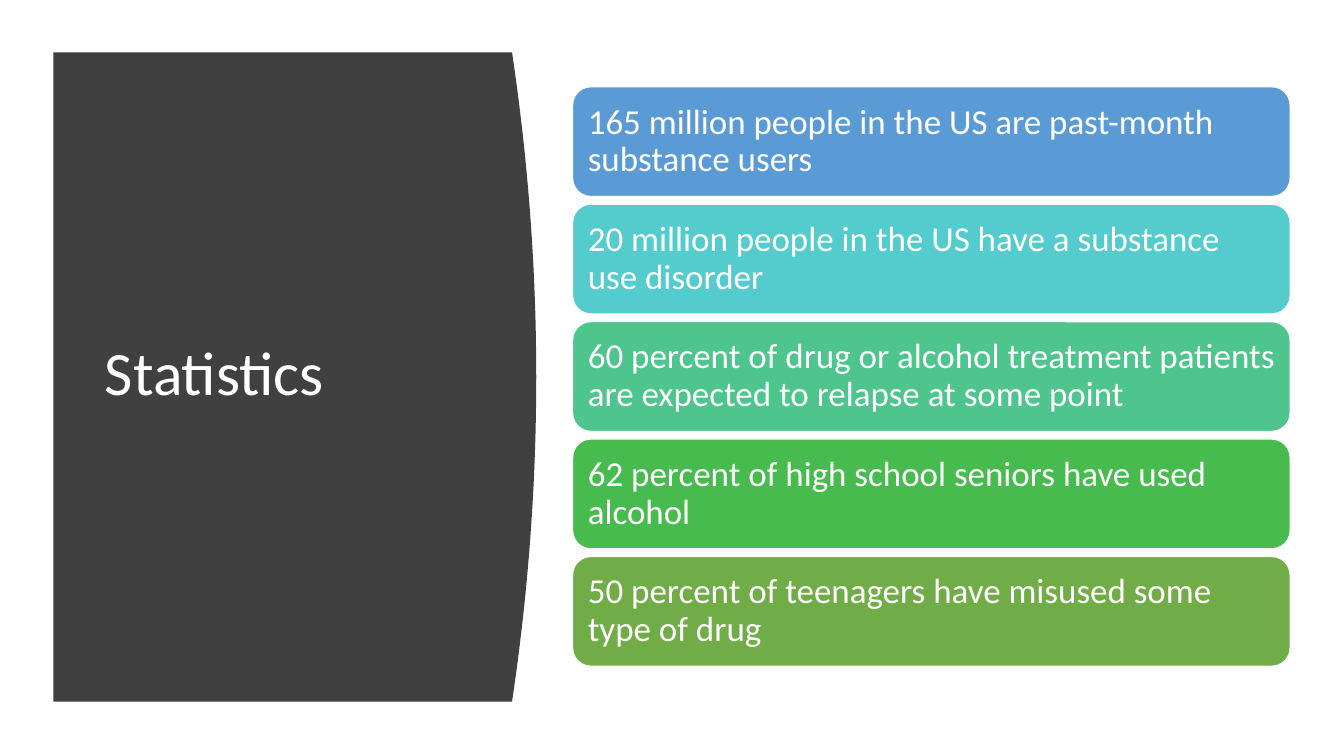
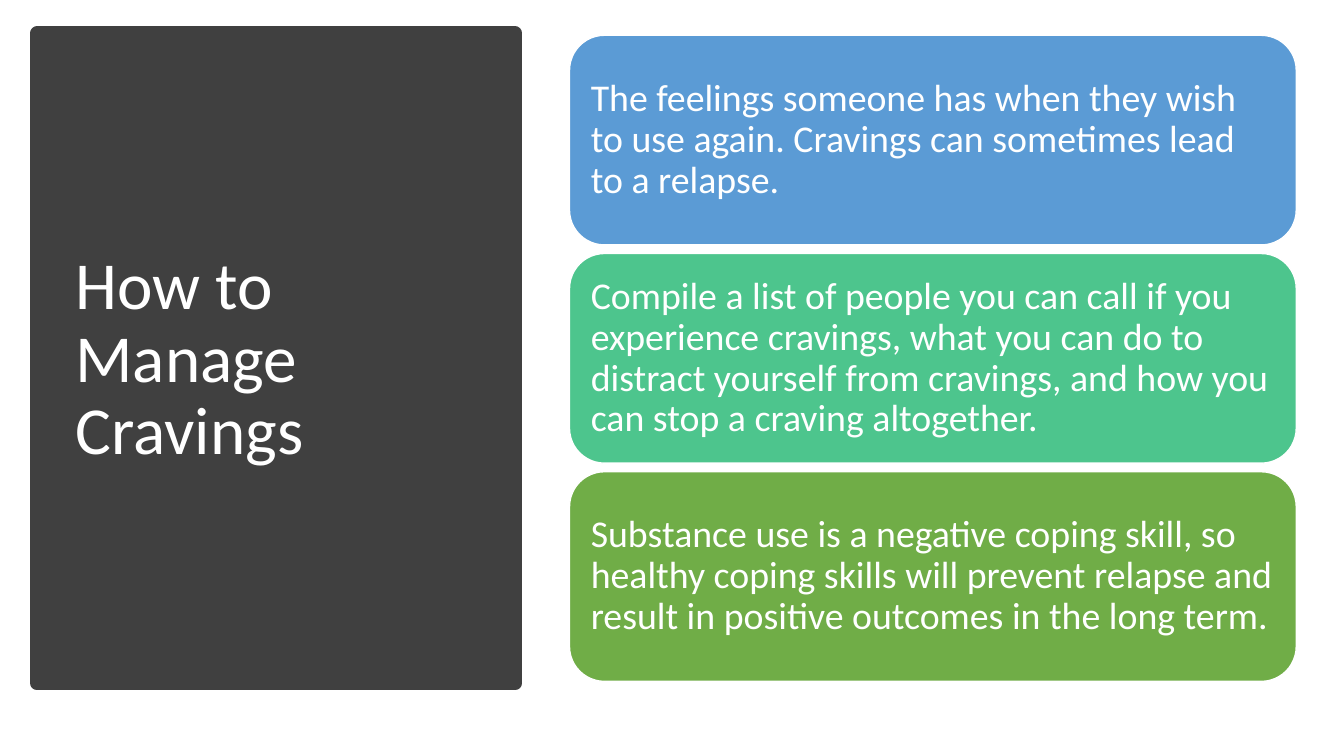
from pptx import Presentation
from pptx.dml.color import RGBColor
from pptx.enum.shapes import MSO_SHAPE
from pptx.enum.text import MSO_ANCHOR, MSO_AUTO_SIZE, PP_ALIGN
from pptx.util import Emu, Pt

PX = 9144  # EMU; 100 px to the inch
FONT = "Calibri"
WHITE = RGBColor(0xFF, 0xFF, 0xFF)
CHARCOAL = RGBColor(0x40, 0x40, 0x40)
BLUE = RGBColor(0x5B, 0x9B, 0xD5)
TURQUOISE = RGBColor(0x54, 0xCC, 0xCD)
MINT = RGBColor(0x4D, 0xC5, 0x8D)
GREEN = RGBColor(0x48, 0xBB, 0x4F)
OLIVE = RGBColor(0x70, 0xAD, 0x47)

STATISTICS = [
    ("165 million people in the US are past-month substance users", BLUE),
    ("20 million people in the US have a substance use disorder", TURQUOISE),
    ("60 percent of drug or alcohol treatment patients are expected "
     "to relapse at some point", MINT),
    ("62 percent of high school seniors have used alcohol", GREEN),
    ("50 percent of teenagers have misused some type of drug", OLIVE),
]
CRAVINGS = [
    ("The feelings someone has when they wish to use again. "
     "Cravings can sometimes lead to a relapse.", BLUE),
    ("Compile a list of people you can call if you experience cravings, "
     "what you can do to distract yourself from cravings, and how you can "
     "stop a craving altogether.", MINT),
    ("Substance use is a negative coping skill, so healthy coping skills "
     "will prevent relapse and result in positive outcomes in the long term.",
     OLIVE),
]


def px(*lengths):
    return [Emu(round(n * PX)) for n in lengths]


def paint(sp, fill, line, width):
    sp.shadow.inherit = False
    sp.fill.solid()
    sp.fill.fore_color.rgb = fill
    sp.line.color.rgb = line
    sp.line.width = Pt(width)


def style_text(tf, size):
    tf.word_wrap = True
    tf.auto_size = MSO_AUTO_SIZE.NONE
    tf.vertical_anchor = MSO_ANCHOR.MIDDLE
    p = tf.paragraphs[0]
    p.alignment = PP_ALIGN.LEFT
    p.line_spacing = 0.9
    p.font.name = FONT
    p.font.size = Pt(size)
    p.font.color.rgb = WHITE


def send_to_back(slide, sp):
    slide.shapes._spTree.insert(2, sp._element)


def add_title(slide, text, box, size):
    title = slide.shapes.title
    title.left, title.top, title.width, title.height = px(*box)
    title.text_frame.text = text
    style_text(title.text_frame, size)


def add_curved_panel(slide, box, bulge, steps=48):
    """Panel whose right edge bows out by bulge, as a parabola."""
    x, y, w, h = box
    edge = []
    for i in range(steps + 1):
        t = i / steps
        edge.append(px(x + w - bulge * (2 * t - 1) ** 2, y + h * t))
    builder = slide.shapes.build_freeform(*px(x, y), scale=1.0)
    builder.add_line_segments(edge + [px(x, y + h)], close=True)
    panel = builder.convert_to_shape()
    paint(panel, CHARCOAL, CHARCOAL, 0)
    panel.line.fill.background()
    send_to_back(slide, panel)


def add_square_panel(slide, box):
    panel = slide.shapes.add_shape(MSO_SHAPE.RECTANGLE, *px(*box))
    paint(panel, CHARCOAL, CHARCOAL, 10)
    send_to_back(slide, panel)


def add_bars(slide, items, box, bar_height, size, inset):
    """Stack equal bars so that they fill the box from top to bottom."""
    x, y, w, h = box
    pitch = (h - bar_height) / (len(items) - 1)
    for i, (text, color) in enumerate(items):
        bar = slide.shapes.add_shape(
            MSO_SHAPE.ROUNDED_RECTANGLE, *px(x, y + i * pitch, w, bar_height))
        paint(bar, color, WHITE, 1)
        tf = bar.text_frame
        tf.text = text
        tf.margin_left, tf.margin_top, tf.margin_right, tf.margin_bottom = \
            px(*[inset] * 4)
        style_text(tf, size)


def build_statistics(slide):
    add_curved_panel(slide, (53, 52, 479, 644), bulge=24)
    add_title(slide, "Statistics", (94, 111, 374, 524), 44)
    add_bars(slide, STATISTICS, (568, 86, 712, 575), 109, 25, 10)


def build_cravings(slide):
    add_square_panel(slide, (37, 33, 474, 645))
    add_title(slide, "How to Manage Cravings", (65, 70, 416, 575), 48)
    add_bars(slide, CRAVINGS, (565, 35, 721, 641), 208, 27, 11)


def main():
    prs = Presentation()
    prs.slide_width, prs.slide_height = px(1333.33, 750)
    title_only = prs.slide_layouts[5]
    for build in (build_statistics, build_cravings):
        build(prs.slides.add_slide(title_only))
    prs.save("out.pptx")


if __name__ == "__main__":
    main()
